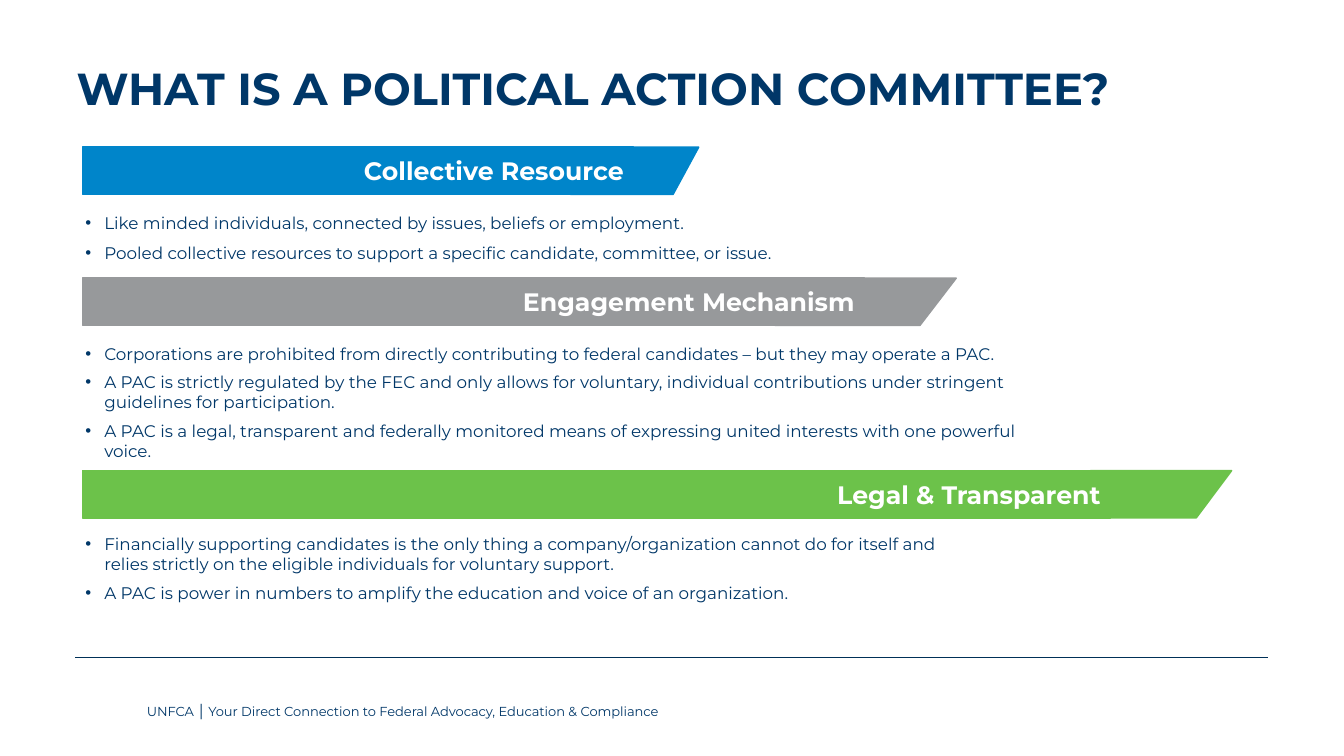
from dataclasses import dataclass
from typing import Optional

from lxml import etree
from pptx import Presentation
from pptx import util as u
from pptx.dml.color import RGBColor
from pptx.enum import shapes, text
from pptx.oxml.ns import qn


@dataclass(frozen=True)
class Theme:
    font: str = "Montserrat"
    navy: str = "003768"
    rule: str = "003057"
    white: str = "FFFFFF"
    blue: str = "0085CA"
    grey: str = "97999B"
    green: str = "6CC24A"
    title_size: float = 32
    banner_size: float = 18
    body_size: float = 12
    footer_size: float = 9.3


@dataclass(frozen=True)
class Section:
    heading: str
    color: str
    banner_top: float
    banner_width: float
    tip_left: float
    tip_width: float
    body_top: float
    body_width: float
    body_height: float
    bullets: tuple[str, ...]
    line_pitch: Optional[float] = None


THEME = Theme()
BANNER_LEFT, BANNER_HEIGHT = 2.08, 1.19
BODY_LEFT, BULLET_INDENT = 1.9, 0.48

SECTIONS = (
    Section("Collective Resource", THEME.blue, 3.71, 13.89, 14.38, 3.23,
            5.21, 19.91, 1.5, (
                "Like minded individuals, connected by issues, beliefs or employment.",
                "Pooled collective resources to support a specific candidate, committee, or issue.",
            ), line_pitch=15.3),
    Section("Engagement Mechanism", THEME.grey, 7.01, 19.71, 19.53, 4.57,
            8.53, 24.41, 3.25, (
                "Corporations are prohibited from directly contributing to federal candidates"
                " – but they may operate a PAC.",
                "A PAC is strictly regulated by the FEC and only allows for voluntary, individual"
                " contributions under stringent guidelines for participation.",
                "A PAC is a legal, transparent and federally monitored means of expressing united"
                " interests with one powerful voice.",
            )),
    Section("Legal & Transparent", THEME.green, 11.86, 25.91, 26.59, 4.45,
            13.33, 23.16, 2.01, (
                "Financially supporting candidates is the only thing a company/organization cannot"
                " do for itself and relies strictly on the eligible individuals for voluntary support.",
                "A PAC is power in numbers to amplify the education and voice of an organization.",
            )),
)


def format_runs(frame, size: float, color: str, bold: bool = False) -> None:
    for para in frame.paragraphs:
        for span in para.runs:
            span.font.name = THEME.font
            span.font.size = u.Pt(size)
            span.font.bold = bold
            span.font.color.rgb = RGBColor.from_string(color)


def add_text(page, left: float, top: float, width: float, height: float,
             wording: str, size: float, bold: bool = False):
    box = page.shapes.add_textbox(u.Cm(left), u.Cm(top), u.Cm(width), u.Cm(height))
    frame = box.text_frame
    frame.word_wrap = True
    frame.text = wording
    format_runs(frame, size, THEME.navy, bold)
    return frame


def add_bullet(para) -> None:
    """Give the paragraph a hanging round bullet."""
    properties = para._p.get_or_add_pPr()
    properties.set("marL", str(u.Cm(BULLET_INDENT)))
    properties.set("indent", str(-u.Cm(BULLET_INDENT)))
    etree.SubElement(properties, qn("a:buFont")).set("typeface", "Arial")
    etree.SubElement(properties, qn("a:buChar")).set("char", "•")


def add_body(page, section: Section) -> None:
    frame = add_text(page, BODY_LEFT, section.body_top, section.body_width,
                     section.body_height, "\n".join(section.bullets), THEME.body_size)
    for para in frame.paragraphs:
        add_bullet(para)
        para.space_after = u.Pt(6)
        if section.line_pitch:
            para.line_spacing = u.Pt(section.line_pitch)


def add_banner(page, section: Section) -> None:
    """Draw a slanted tip with the headed bar over its left part."""
    group = page.shapes.add_group_shape()
    parts = (
        (shapes.MSO_SHAPE.FLOWCHART_DATA, section.tip_left, section.tip_width),
        (shapes.MSO_SHAPE.FLOWCHART_PROCESS, BANNER_LEFT, section.banner_width),
    )
    for kind, left, width in parts:
        bar = group.shapes.add_shape(kind, u.Cm(left), u.Cm(section.banner_top),
                                     u.Cm(width), u.Cm(BANNER_HEIGHT))
        bar.shadow.inherit = False
        bar.fill.solid()
        bar.fill.fore_color.rgb = RGBColor.from_string(section.color)
        bar.line.color.rgb = RGBColor.from_string(section.color)
        bar.line.width = u.Pt(1)
    frame = bar.text_frame
    frame.word_wrap = True
    frame.vertical_anchor = text.MSO_ANCHOR.MIDDLE
    frame.text = section.heading
    frame.paragraphs[0].alignment = text.PP_ALIGN.RIGHT
    format_runs(frame, THEME.banner_size, THEME.white, bold=True)


def add_rule(page) -> None:
    rule = page.shapes.add_connector(shapes.MSO_CONNECTOR.STRAIGHT,
                                     u.Cm(31.95), u.Cm(16.56), u.Cm(1.9), u.Cm(16.56))
    rule.line.color.rgb = RGBColor.from_string(THEME.rule)
    rule.line.width = u.Pt(0.5)
    etree.SubElement(rule._element.spPr, qn("a:effectLst"))


def main() -> None:
    deck = Presentation()
    deck.slide_width, deck.slide_height = u.Cm(33.87), u.Cm(19.05)
    page = deck.slides.add_slide(deck.slide_layouts[6])

    add_rule(page)
    add_text(page, 3.45, 17.6, 15.04, 1.07,
             "UNFCA │ Your Direct Connection to Federal Advocacy, Education & Compliance",
             THEME.footer_size)
    title = add_text(page, 1.68, 1.55, 30.3, 2.74,
                     "WHAT IS A POLITICAL ACTION COMMITTEE?", THEME.title_size, bold=True)
    title.paragraphs[0].line_spacing = 0.9
    for section in SECTIONS:
        add_body(page, section)
        add_banner(page, section)

    deck.save("out.pptx")


if __name__ == "__main__":
    main()
